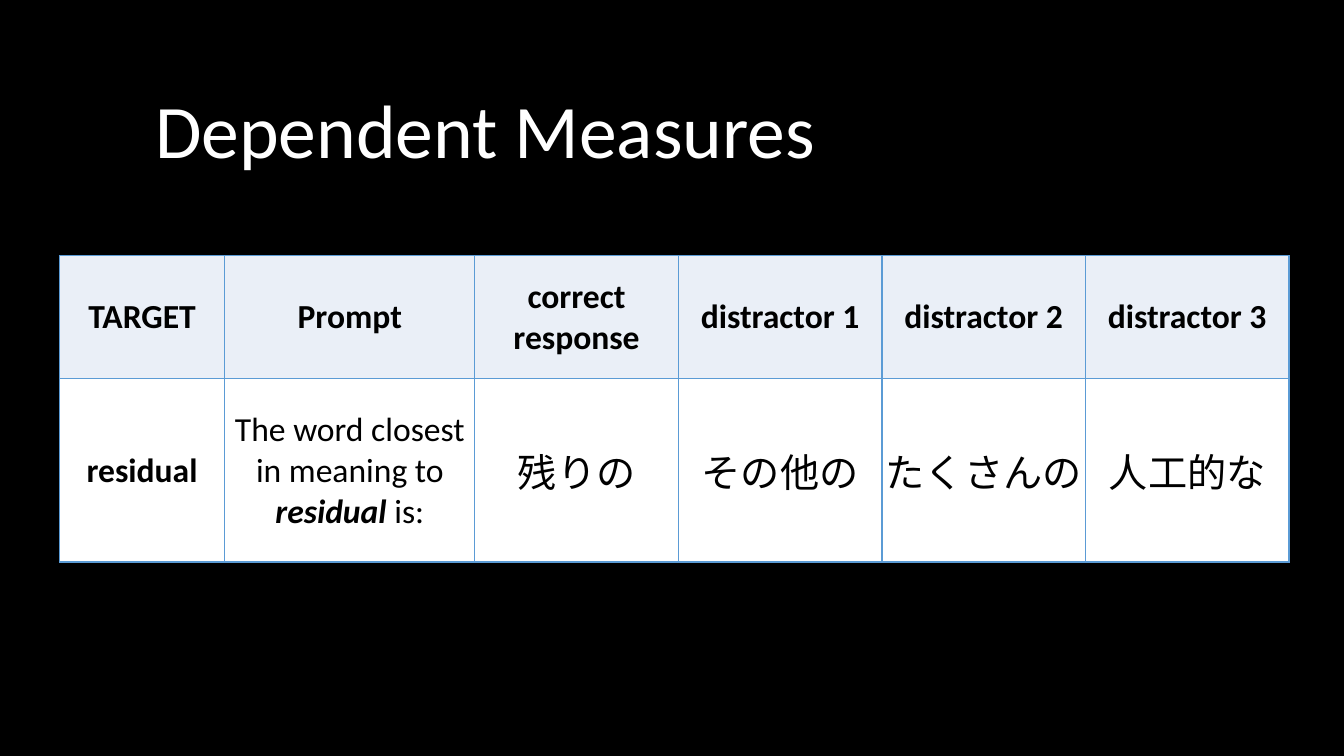
"""Build the Dependent Measures slide with its vocabulary item table."""
from dataclasses import dataclass

from lxml import etree
from pptx import Presentation
from pptx.dml.color import RGBColor
from pptx.enum import text
from pptx.oxml import ns
from pptx.slide import Slide
from pptx.table import _Cell
from pptx.util import Pt


@dataclass(frozen=True)
class Theme:
    background: str = "000000"
    title: str = "FFFFFF"
    ink: str = "000000"
    header_fill: str = "EAEFF7"
    body_fill: str = "FFFFFF"
    border: str = "5B9BD5"
    font: str = "Calibri"
    title_size: float = 54
    label_size: float = 24
    answer_size: float = 28
    border_width: float = 1


@dataclass(frozen=True)
class Piece:
    content: str
    size: float
    color: str
    bold: bool = False
    italic: bool = False


THEME = Theme()
COLUMN_WIDTHS = [118.1, 178.6] + [145.4] * 4
ROW_HEIGHTS = [87.8, 131]
HEADERS = ["TARGET", "Prompt", "correct response", "distractor 1", "distractor 2", "distractor 3"]
ANSWERS = ["残りの", "その他の", "たくさんの", "人工的な"]


def label(content: str, bold: bool = True, italic: bool = False) -> Piece:
    return Piece(content, THEME.label_size, THEME.ink, bold, italic)


PROMPT = [
    label("The word closest in meaning to ", bold=False),
    label("residual", italic=True),
    label(" is:", bold=False),
]
ROWS = [
    [[label(header)] for header in HEADERS],
    [[label("residual")], PROMPT]
    + [[Piece(answer, THEME.answer_size, THEME.ink)] for answer in ANSWERS],
]
ROW_FILLS = [THEME.header_fill, THEME.body_fill]


def write_pieces(text_frame: text.MSO_ANCHOR, pieces: list[Piece]) -> None:
    paragraph = text_frame.paragraphs[0]
    for piece in pieces:
        run = paragraph.add_run()
        run.text = piece.content
        run.font.name = THEME.font
        run.font.size = Pt(piece.size)
        run.font.bold = piece.bold
        run.font.italic = piece.italic
        run.font.color.rgb = RGBColor.from_string(piece.color)


def add_borders(cell: _Cell) -> None:
    properties = cell._tc.get_or_add_tcPr()
    for side in ("a:lnL", "a:lnR", "a:lnT", "a:lnB"):
        line = etree.SubElement(properties, ns.qn(side), w=str(Pt(THEME.border_width)))
        fill = etree.SubElement(line, ns.qn("a:solidFill"))
        etree.SubElement(fill, ns.qn("a:srgbClr"), val=THEME.border)


def format_cell(cell: _Cell, pieces: list[Piece], fill: str) -> None:
    add_borders(cell)
    cell.fill.solid()
    cell.fill.fore_color.rgb = RGBColor.from_string(fill)
    cell.margin_left = cell.margin_right = cell.margin_top = Pt(0.7)
    cell.margin_bottom = Pt(0)
    cell.vertical_anchor = text.MSO_ANCHOR.MIDDLE
    write_pieces(cell.text_frame, pieces)
    cell.text_frame.paragraphs[0].alignment = text.PP_ALIGN.CENTER


def add_title(slide: Slide, content: str) -> None:
    title = slide.shapes.add_textbox(Pt(103.7), Pt(55.4), Pt(719.3), Pt(72.7))
    title.text_frame.word_wrap = True
    title.text_frame.auto_size = text.MSO_AUTO_SIZE.SHAPE_TO_FIT_TEXT
    write_pieces(title.text_frame, [Piece(content, THEME.title_size, THEME.title)])


def add_item_table(slide: Slide) -> None:
    table = slide.shapes.add_table(
        len(ROWS), len(HEADERS), Pt(42.5), Pt(182.6),
        Pt(sum(COLUMN_WIDTHS)), Pt(sum(ROW_HEIGHTS)),
    ).table
    table.first_row = table.horz_banding = False
    for column, width in zip(table.columns, COLUMN_WIDTHS):
        column.width = Pt(width)
    for row, height, contents, fill in zip(table.rows, ROW_HEIGHTS, ROWS, ROW_FILLS):
        row.height = Pt(height)
        for cell, pieces in zip(row.cells, contents):
            format_cell(cell, pieces, fill)


def main() -> None:
    presentation = Presentation()
    presentation.slide_width, presentation.slide_height = Pt(960), Pt(540)
    slide = presentation.slides.add_slide(presentation.slide_layouts[6])
    slide.background.fill.solid()
    slide.background.fill.fore_color.rgb = RGBColor.from_string(THEME.background)
    add_item_table(slide)
    add_title(slide, "Dependent Measures")
    presentation.save("out.pptx")


if __name__ == "__main__":
    main()
